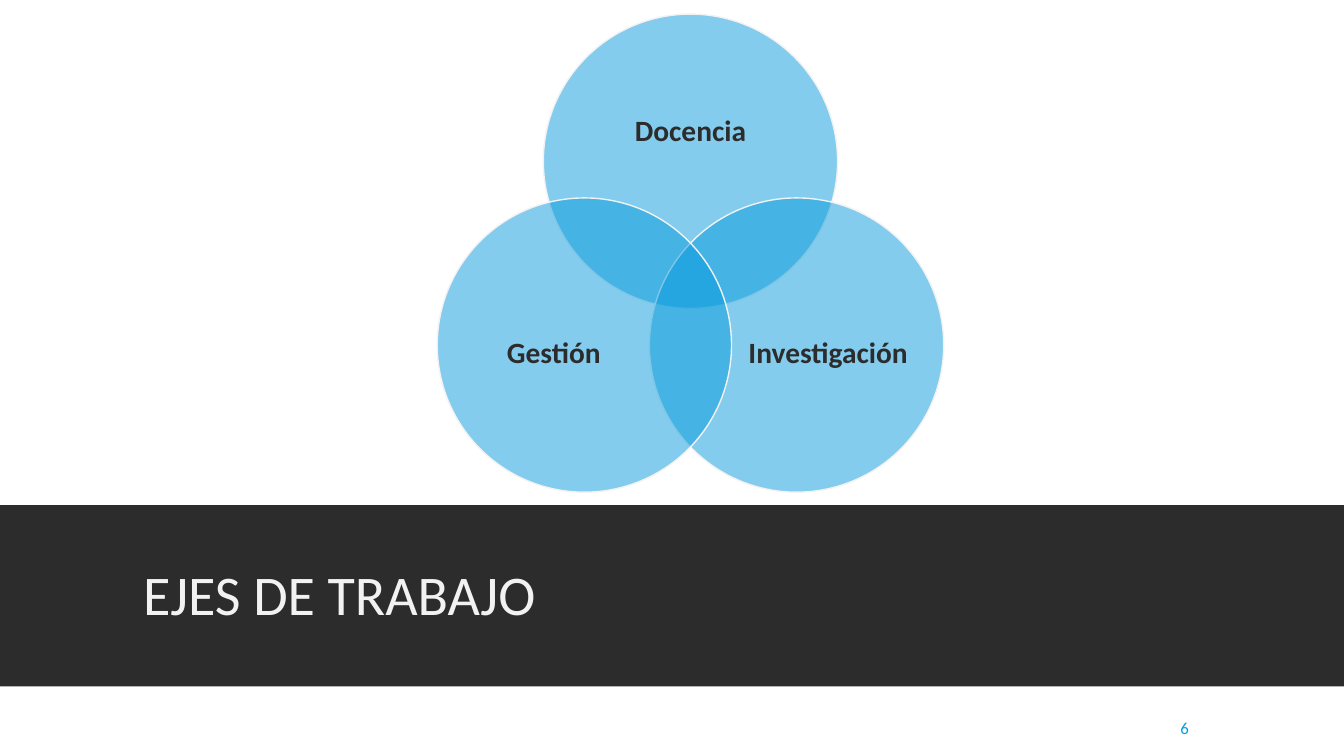
from dataclasses import dataclass
from math import cos, radians, sin

from lxml import etree
from pptx import Presentation
from pptx.dml.color import RGBColor
from pptx.enum.shapes import MSO_SHAPE
from pptx.enum.text import MSO_ANCHOR, MSO_AUTO_SIZE, PP_ALIGN
from pptx.oxml.ns import qn
from pptx.util import Pt

RECT, OVAL = MSO_SHAPE.RECTANGLE, MSO_SHAPE.OVAL
MIDDLE, FIXED = MSO_ANCHOR.MIDDLE, MSO_AUTO_SIZE.NONE
LEFT, CENTER = PP_ALIGN.LEFT, PP_ALIGN.CENTER


@dataclass(frozen=True)
class Theme:
    font: str = "Calibri"
    dark: str = "2C2C2C"
    light: str = "F2F2F2"
    blue: str = "099BDD"
    title: int = 40
    label: int = 21
    number: int = 12


class Deck:
    def __init__(self, theme, slide):
        self.theme = theme
        self.slide = slide

    def fill_text(self, shape, text, size, color, align=LEFT, bold=False,
                  spacing=1.0, inset=(7.2, 3.6, 7.2, 3.6)):
        frame = shape.text_frame
        frame.text = text
        frame.word_wrap = True
        frame.auto_size = FIXED
        frame.vertical_anchor = MIDDLE
        (frame.margin_left, frame.margin_top,
         frame.margin_right, frame.margin_bottom) = map(Pt, inset)
        para = frame.paragraphs[0]
        para.alignment = align
        para.line_spacing = spacing
        font = para.font
        font.name, font.size, font.bold = self.theme.font, Pt(size), bold
        font.color.rgb = RGBColor.from_string(color)

    def title(self, text, box):
        shape = self.slide.shapes.title
        shape.left, shape.top, shape.width, shape.height = map(Pt, box)
        self.fill_text(shape, text, self.theme.title, self.theme.light,
                       spacing=0.85)

    def text(self, text, box, size, color, home=None, **style):
        shapes = (home or self.slide).shapes
        self.fill_text(shapes.add_textbox(*map(Pt, box)), text, size, color,
                       **style)

    def band(self, box):
        shape = self.slide.shapes.add_shape(RECT, *map(Pt, box))
        shape.shadow.inherit = False
        shape.fill.solid()
        shape.fill.fore_color.rgb = RGBColor.from_string(self.theme.dark)
        shape.line.fill.background()
        self.slide.shapes.title.element.addprevious(shape.element)

    def circle(self, home, x, y, size):
        box = x - size / 2, y - size / 2, size, size
        shape = home.shapes.add_shape(OVAL, *map(Pt, box))
        shape.shadow.inherit = False
        shape.fill.solid()
        shape.fill.fore_color.rgb = RGBColor.from_string(self.theme.blue)
        color = shape.element.spPr.find(qn("a:solidFill"))[0]
        etree.SubElement(color, qn("a:alpha")).set("val", "50000")
        shape.line.color.rgb = RGBColor.from_string(self.theme.light)
        shape.line.width = Pt(1)

    def venn(self, x, y, ring, size, sets):
        group = self.slide.shapes.add_group_shape()
        for name, angle, box in sets:
            turn = radians(angle)
            self.circle(group, x + ring * cos(turn), y + ring * sin(turn), size)
            self.text(name, box, self.theme.label, self.theme.dark, group,
                      align=CENTER, bold=True, spacing=0.9, inset=(0, 0, 0, 0))


def main():
    theme = Theme()
    show = Presentation()
    show.slide_width, show.slide_height = Pt(960), Pt(540)
    deck = Deck(theme, show.slides.add_slide(show.slide_layouts[5]))
    deck.band((0, 360.8, 960, 129.6))
    deck.title("EJES DE TRABAJO", (95, 368, 770.4, 118.8))
    deck.text("6", (839.5, 505.5, 74, 28.8), theme.number, theme.blue,
              inset=(3.6, 3.6, 7.2, 3.6))
    deck.venn(493.2, 202.7, 87.5, 210.2, [
        ("Docencia", -90, (416.2, 46.8, 154, 94.3)),
        ("Investigación", 30, (528.5, 195.1, 126, 115.2)),
        ("Gestión", 150, (332.6, 195.1, 126, 115.2)),
    ])
    show.save("out.pptx")


if __name__ == "__main__":
    main()
